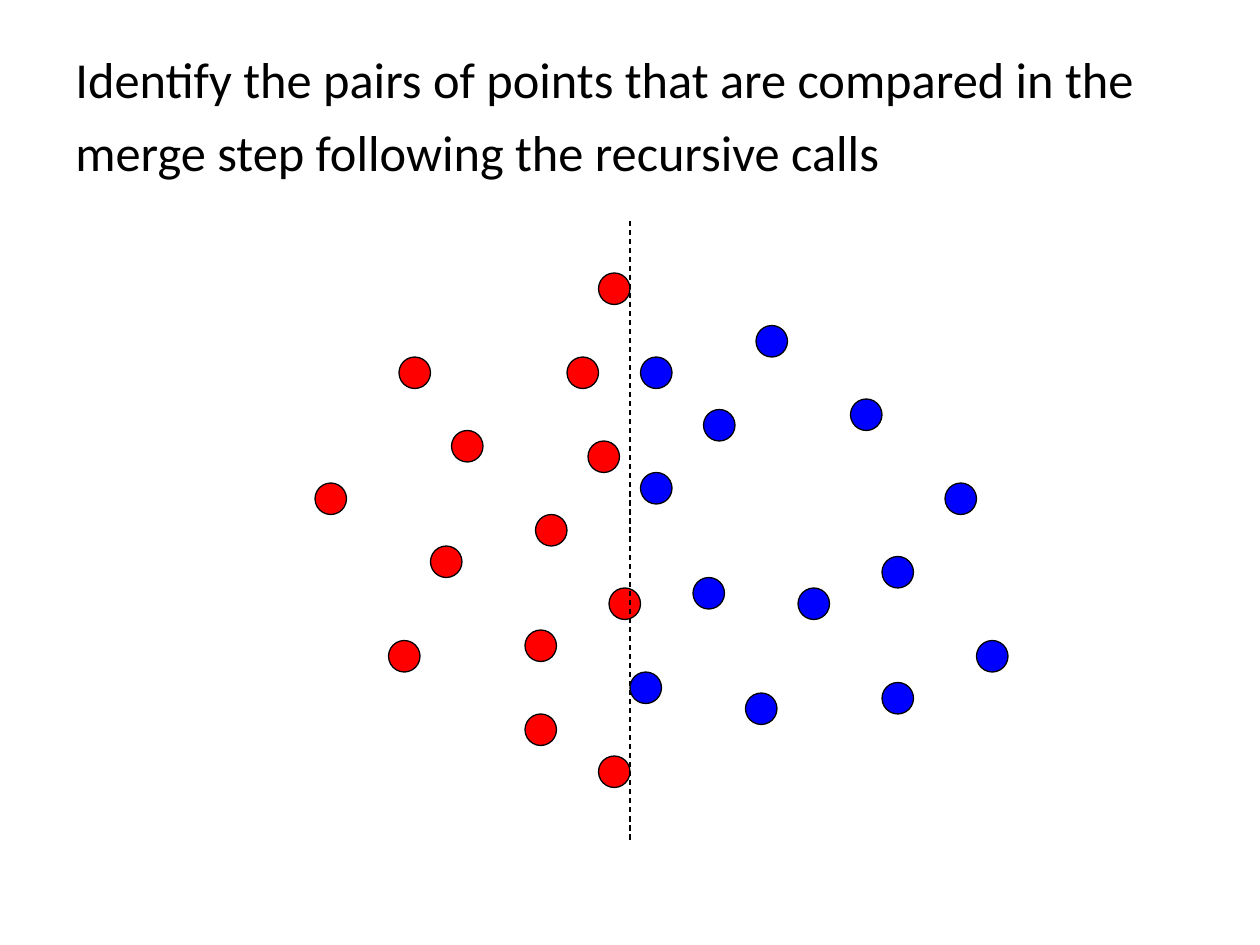
from dataclasses import dataclass

from lxml.etree import SubElement
from pptx import Presentation
from pptx.dml.color import RGBColor
from pptx.enum.dml import MSO_LINE
from pptx.enum.shapes import MSO_CONNECTOR, MSO_SHAPE
from pptx.enum.text import MSO_ANCHOR
from pptx.oxml.ns import qn
from pptx.util import Pt

PX = 914400 // 120  # 120 px to the inch
GRID = 10           # points sit on a 10 px grid
DOT = 30


@dataclass(frozen=True)
class Theme:
    font: str = "Calibri"
    ink: RGBColor = RGBColor(0, 0, 0)
    red: RGBColor = RGBColor(255, 0, 0)
    blue: RGBColor = RGBColor(0, 0, 255)
    title: float = 28.8
    tail: float = 36
    line: float = 0.75


class Board:
    def __init__(self, slide, theme):
        self.slide = slide
        self.theme = theme

    def text(self, x, y, w, h, runs):
        box = self.slide.shapes.add_textbox(x * PX, y * PX, w * PX, h * PX)
        frame = box.text_frame
        frame.word_wrap = True
        frame.vertical_anchor = MSO_ANCHOR.MIDDLE
        for words, size in runs:
            run = frame.paragraphs[0].add_run()
            run.text = words
            run.font.name = self.theme.font
            run.font.size = Pt(size)
            run.font.color.rgb = self.theme.ink

    def stroke(self, line):
        line.color.rgb = self.theme.ink
        line.width = Pt(self.theme.line)

    def dot(self, x, y, fill):
        dot = self.slide.shapes.add_shape(
            MSO_SHAPE.OVAL, x * PX, y * PX, DOT * PX, DOT * PX)
        dot.shadow.inherit = False
        dot.fill.solid()
        dot.fill.fore_color.rgb = fill
        self.stroke(dot.line)

    def dash(self, x1, y1, x2, y2):
        line = self.slide.shapes.add_connector(
            MSO_CONNECTOR.STRAIGHT, x1 * PX, y1 * PX, x2 * PX, y2 * PX)
        self.stroke(line.line)
        line.line.dash_style = MSO_LINE.DASH
        SubElement(line.element.spPr, qn("a:effectLst"))


# Left and top of each point, in grid steps
LEFT = [(57, 72), (57, 26), (30, 46), (37, 61), (38, 34), (41, 52), (50, 68),
        (50, 60), (58, 56), (43, 41), (51, 49), (56, 42), (54, 34)]
RIGHT = [(61, 34), (72, 31), (61, 45), (81, 38), (66, 55), (67, 39), (60, 64),
         (76, 56), (90, 46), (71, 66), (84, 53), (84, 65), (93, 61)]


def main():
    deck = Presentation()
    deck.slide_width = 1200 * PX
    deck.slide_height = 900 * PX
    theme = Theme()
    board = Board(deck.slides.add_slide(deck.slide_layouts[6]), theme)

    # Title; the larger last space sets the height of its line
    board.text(60, 36, 1120, 150, [
        ("Identify the pairs of points that are compared in the "
         "merge step following the recursive calls", theme.title),
        (" ", theme.tail),
    ])

    # Points on each side
    for points, fill in ((LEFT, theme.red), (RIGHT, theme.blue)):
        for col, row in points:
            board.dot(col * GRID, row * GRID, fill)

    # Dividing line
    board.dash(600, 210, 600, 800)

    deck.save("out.pptx")


if __name__ == "__main__":
    main()
